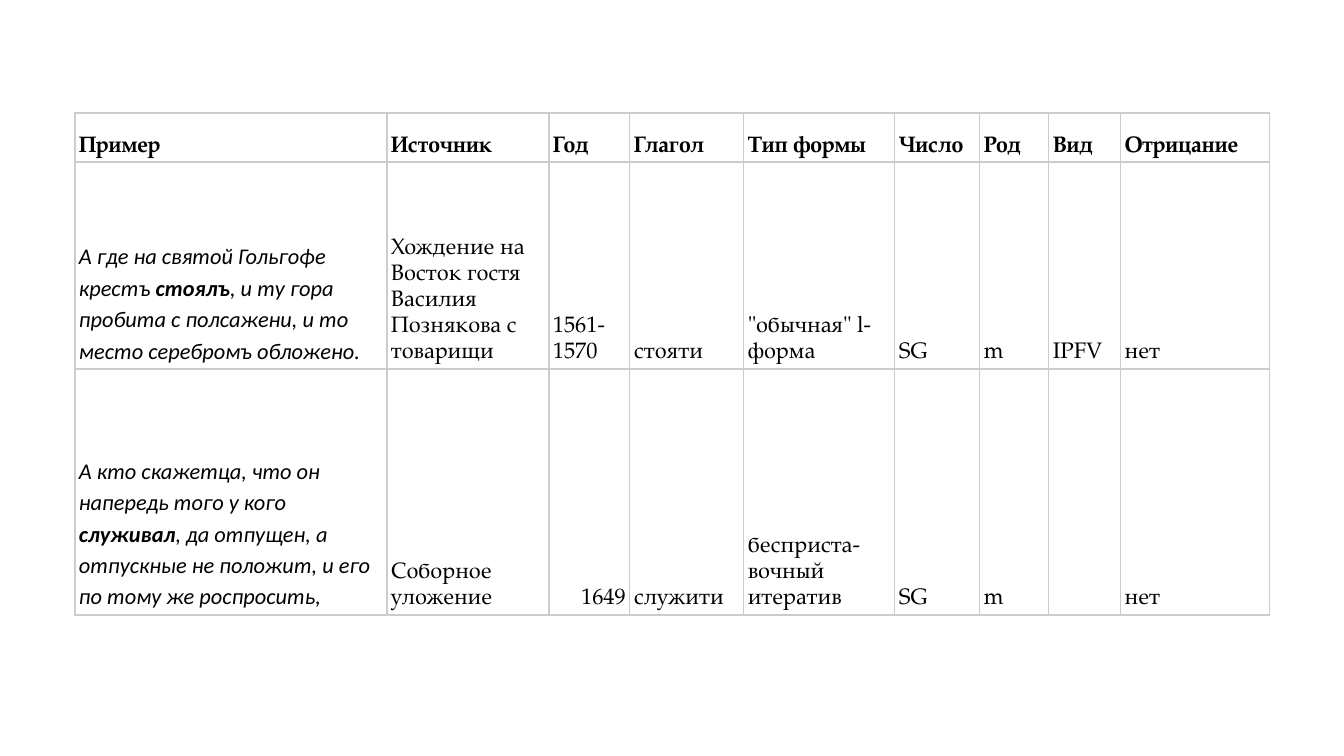
from lxml.etree import SubElement
from pptx import Presentation
from pptx.dml.color import RGBColor
from pptx.enum.text import MSO_ANCHOR as ANCHOR, PP_ALIGN as ALIGN
from pptx.oxml.ns import qn
from pptx.util import Pt

HEADERS = ["Пример", "Источник", "Год", "Глагол", "Тип формы",
           "Число", "Род", "Вид", "Отрицание"]
# Each example: text before the verb, the verb itself, text after it
EXAMPLES = [
    ("А где на святой Гольгофе крестъ ", "стоялъ",
     ", и ту гора пробита с полсажени, и то место серебромъ обложено."),
    ("А кто скажетца, что он напередь того у кого ", "служивал",
     ", да отпущен, а отпускные не положит, и его по тому же роспросить,"),
]
# A line break inside a value starts a new paragraph
DETAILS = [
    ["Хождение на Восток гостя Василия Познякова с товарищи", "1561-\n1570",
     "стояти", '"обычная" l-форма', "SG", "m", "IPFV", "нет"],
    ["Соборное уложение", "1649", "служити", "бесприста-\nвочный итератив",
     "SG", "m", "", "нет"],
]

SLIDE_W, SLIDE_H = 1344, 756
LEFT, TOP = 75, 113
COL_WIDTHS = [312, 162, 81, 114, 151, 85, 69, 72, 149]
ROW_HEIGHTS = [49, 207, 246]
INSET = 4
BLACK, WHITE, GRID = "000000", "FFFFFF", "CCCCCC"
SERIF, SANS = "TeX Gyre Pagella", "Calibri"


def px(n):
    return round(n * 914400 / 134.4)


def color(value):
    return RGBColor.from_string(value)


def set_borders(cell):
    tc_pr = cell._tc.get_or_add_tcPr()
    for side in ("lnL", "lnR", "lnT", "lnB"):
        ln = SubElement(tc_pr, qn(f"a:{side}"), w=str(Pt(0.75)))
        fill = SubElement(ln, qn("a:solidFill"))
        SubElement(fill, qn("a:srgbClr"), val=GRID)


def style_cell(cell):
    set_borders(cell)
    cell.fill.solid()
    cell.fill.fore_color.rgb = color(WHITE)
    cell.vertical_anchor = ANCHOR.BOTTOM
    cell.margin_left = cell.margin_right = px(INSET)
    cell.margin_top = cell.margin_bottom = px(INSET)


def add_run(p, text, font=SERIF, bold=False, italic=False):
    r = p.add_run()
    r.text = text
    r.font.name, r.font.size = font, Pt(12)
    r.font.bold, r.font.italic = bold, italic
    r.font.color.rgb = color(BLACK)


def write_lines(cell, text, bold=False):
    tf = cell.text_frame
    for i, line in enumerate(text.split("\n")):
        p = tf.add_paragraph() if i else tf.paragraphs[0]
        p.line_spacing = 1.15
        if line.isdigit() and "\n" not in text:
            p.alignment = ALIGN.RIGHT
        if line:
            add_run(p, line, bold=bold)


def write_example(cell, parts):
    """Write an example in italics with its verb in bold."""
    p = cell.text_frame.paragraphs[0]
    p.line_spacing = 1.15
    for text, bold in zip(parts, (False, True, False)):
        add_run(p, text, SANS, bold, italic=True)


def main():
    prs = Presentation()
    prs.slide_width, prs.slide_height = px(SLIDE_W), px(SLIDE_H)
    s = prs.slides.add_slide(prs.slide_layouts[6])
    table = s.shapes.add_table(
        len(ROW_HEIGHTS), len(COL_WIDTHS), px(LEFT), px(TOP),
        px(sum(COL_WIDTHS)), px(sum(ROW_HEIGHTS))).table
    for col, width in zip(table.columns, COL_WIDTHS):
        col.width = px(width)
    for row, height in zip(table.rows, ROW_HEIGHTS):
        row.height = px(height)
    for cell in table.iter_cells():
        style_cell(cell)

    for c, header in enumerate(HEADERS):
        write_lines(table.cell(0, c), header, bold=True)
    for r, (example, details) in enumerate(zip(EXAMPLES, DETAILS), 1):
        write_example(table.cell(r, 0), example)
        for c, text in enumerate(details, 1):
            write_lines(table.cell(r, c), text)
    prs.save("out.pptx")


if __name__ == "__main__":
    main()
